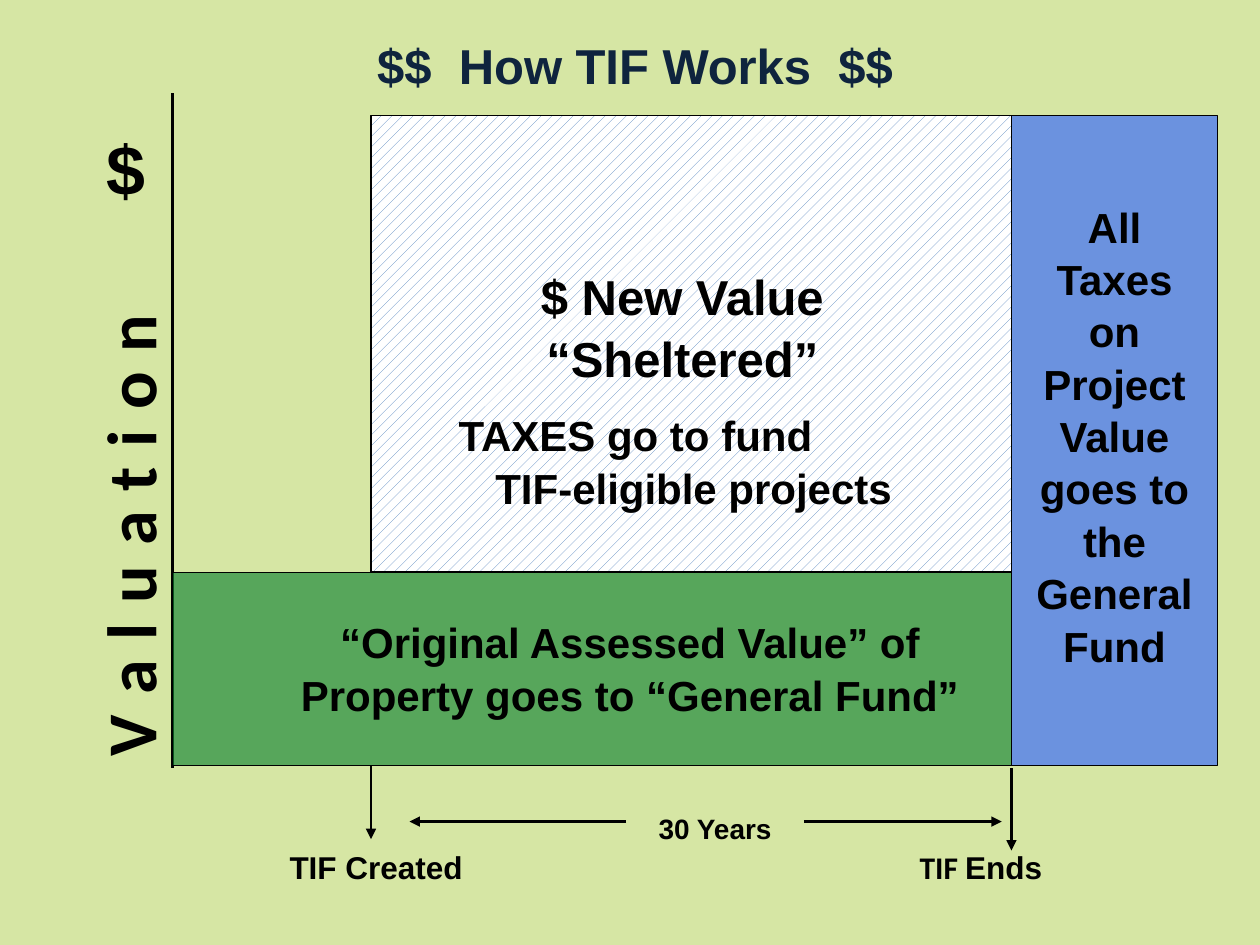
from lxml import etree
from pptx import Presentation
from pptx import util as u
from pptx.dml import color
from pptx.enum import dml, shapes, text
from pptx.oxml import ns

COLORS = {
    "background": "D6E6A4",
    "ink": "000000",
    "title": "0F243E",
    "base": "108233",
    "general": "3366FF",
    "hatch": "4F81BD",
    "paper": "FFFFFF",
}
AXIS_X, CREATED_X, ENDS_X = 98.6, 212, 578
TOP, BASE_TOP, BOTTOM = 66.2, 327, 437.5
ARROW_Y = 469.5


def rgb(name):
    return color.RGBColor.from_string(COLORS[name])


def set_values(target, values):
    for name, value in values.items():
        setattr(target, name, value)


def place(shape, left, top, width, height):
    set_values(shape, {"left": u.Pt(left), "top": u.Pt(top),
                       "width": u.Pt(width), "height": u.Pt(height)})


def add_child(parent, tag, **attributes):
    return etree.SubElement(parent, ns.qn(tag), attributes)


def add_block(slide, left, top, right, bottom):
    block = slide.shapes.add_shape(
        shapes.MSO_SHAPE.RECTANGLE, u.Pt(left), u.Pt(top),
        u.Pt(right - left), u.Pt(bottom - top))
    block.shadow.inherit = False
    block.line.color.rgb = rgb("ink")
    block.line.width = u.Pt(0.75)
    return block


def fill_translucent(block, name, percent):
    block.fill.solid()
    block.fill.fore_color.rgb = rgb(name)
    fill_color = block._element.spPr.find(".//" + ns.qn("a:srgbClr"))
    add_child(fill_color, "a:alpha", val=str(percent * 1000))


def fill_hatched(block):
    block.fill.patterned()
    block.fill.pattern = dml.MSO_PATTERN.PERCENT_20
    block.fill.fore_color.rgb = rgb("hatch")
    block.fill.back_color.rgb = rgb("paper")


def add_line(slide, start, end, width=1.5, arrow=True):
    line = slide.shapes.add_connector(
        shapes.MSO_CONNECTOR.STRAIGHT, *(u.Pt(value) for value in start + end))
    line.line.color.rgb = rgb("ink")
    line.line.width = u.Pt(width)
    if arrow:
        add_child(line.line._get_or_add_ln(), "a:tailEnd", type="triangle")
    add_child(line._element.spPr, "a:effectLst")


def write(paragraph, runs, size, ink="ink", align=text.PP_ALIGN.CENTER):
    set_values(paragraph, {"alignment": align, "line_spacing": 1.04})
    for words, font in runs:
        paragraph.add_run().text = words
        run = paragraph.runs[-1]
        set_values(run.font, {"size": u.Pt(size), "name": font, "bold": True})
        run.font.color.rgb = rgb(ink)


def add_text(slide, box, runs, size, **options):
    label = slide.shapes.add_textbox(0, 0, 0, 0)
    place(label, *box)
    label.text_frame.word_wrap = True
    write(label.text_frame.paragraphs[0], runs, size, **options)
    return label


def add_title(slide):
    title = slide.shapes.title
    place(title, 126, 15.1, 473.8, 41)
    set_values(title.text_frame, {"vertical_anchor": text.MSO_ANCHOR.TOP,
                                  "auto_size": text.MSO_AUTO_SIZE.NONE})
    write(title.text_frame.paragraphs[0], [("$$  How TIF Works  $$", "Arial")],
          28, ink="title")


def add_sheltered_text(slide):
    label = add_text(slide, (252, 147.6, 275.8, 147.6),
                     [("$ New Value “Sheltered”", "Arial")], 28)
    paragraph = label.text_frame.add_paragraph()
    write(paragraph, [("TAXES go to fund", "Arial")], 24,
          align=text.PP_ALIGN.LEFT)
    paragraph.add_line_break()
    write(paragraph, [("TIF-eligible projects", "Arial")], 24,
          align=text.PP_ALIGN.LEFT)
    paragraph.space_before = u.Pt(12)
    properties = paragraph._p.get_or_add_pPr()
    properties.set("marL", str(u.Pt(24)))
    properties.set("indent", str(u.Pt(-21)))


def add_axis_text(slide):
    label = add_text(slide, (-84.2, 255.6, 311.8, 55.4),
                     [("V a l u a t i o n", "Calibri")], 40,
                     align=text.PP_ALIGN.LEFT)
    label.rotation = 270
    run = label.text_frame.paragraphs[0].runs[0]
    run._r.get_or_add_rPr().set("spc", "120")
    add_text(slide, (54, 66.2, 30.2, 55.4), [("$", "Arial")], 40,
             align=text.PP_ALIGN.LEFT)


def main():
    presentation = Presentation()
    set_values(presentation, {"slide_width": u.Pt(720),
                              "slide_height": u.Pt(540)})
    slide = presentation.slides.add_slide(presentation.slide_layouts[5])
    slide.background.fill.solid()
    slide.background.fill.fore_color.rgb = rgb("background")

    add_title(slide)
    add_line(slide, (AXIS_X, 53.3), (AXIS_X, 439), width=1.25, arrow=False)
    fill_translucent(add_block(slide, AXIS_X, BASE_TOP, ENDS_X, BOTTOM),
                     "base", 64)
    fill_translucent(add_block(slide, ENDS_X, TOP, 695.7, BOTTOM),
                     "general", 65)
    fill_hatched(add_block(slide, CREATED_X, TOP, ENDS_X, BASE_TOP))

    for start, end in [
        ((CREATED_X, BOTTOM), (CREATED_X, 479.5)),
        ((ENDS_X, 439), (ENDS_X, 486)),
        ((459.4, ARROW_Y), (572.4, ARROW_Y)),
        ((357.8, ARROW_Y), (234, ARROW_Y)),
    ]:
        add_line(slide, start, end)

    for box, runs, size in [
        ((149.8, 480.2, 130.3, 28.8), [("TIF Created", "Arial")], 18),
        ((515.5, 480.2, 90, 28.8),
         [("TIF ", "Calibri"), ("Ends", "Arial")], 18),
        ((363.6, 459.4, 90, 26.6), [("30 Years", "Arial")], 16),
        ((583.2, 110.2, 107.3, 312.5),
         [("All Taxes on Project Value goes to the General Fund", "Arial")],
         24),
        ((162, 347.8, 396, 65.5),
         [("“Original Assessed Value” of Property goes to “General Fund”",
           "Arial")], 24),
    ]:
        add_text(slide, box, runs, size)
    add_sheltered_text(slide)
    add_axis_text(slide)
    presentation.save("out.pptx")


if __name__ == "__main__":
    main()
